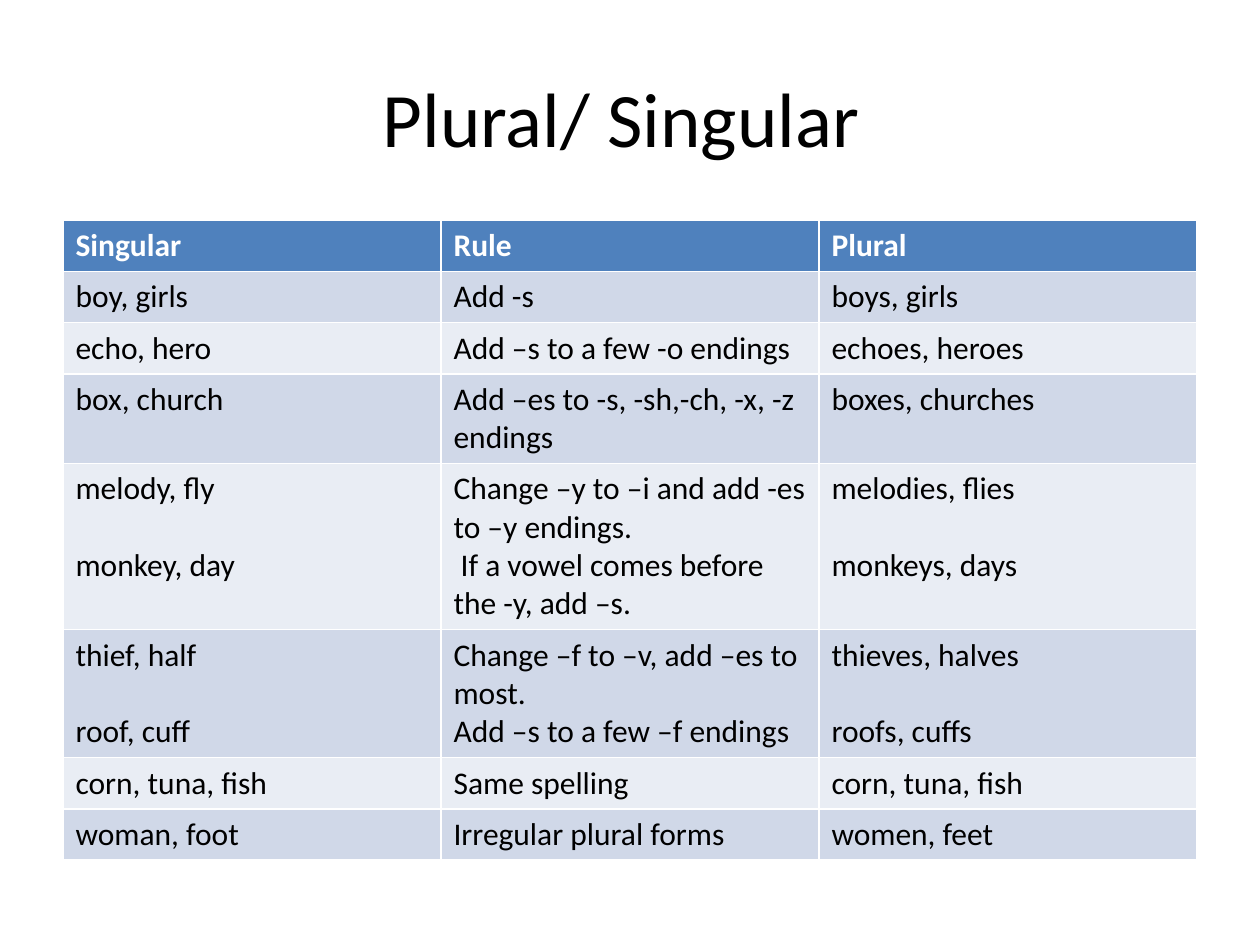
from pptx import Presentation, util as u
from pptx.dml.color import RGBColor
from pptx.enum import text

Pt = u.Pt
hues = {"head": "4F81BD", "odd": "D0D8E8", "even": "E9EDF4", "ink": "000000", "white": "FFFFFF"}
rows = [
    ("Singular", "Rule", "Plural"),
    ("boy, girls", "Add -s", "boys, girls"),
    ("echo, hero", "Add –s to a few -o endings", "echoes, heroes"),
    ("box, church", "Add –es to -s, -sh,-ch, -x, -z endings", "boxes, churches"),
    ("melody, fly\nmonkey, day",
     "Change –y to –i and add -es to –y endings.\n If a vowel comes before the -y, add –s.",
     "melodies, flies\nmonkeys, days"),
    ("thief, half\nroof, cuff",
     "Change –f to –v, add –es to most.\nAdd –s to a few –f endings",
     "thieves, halves\nroofs, cuffs"),
    ("corn, tuna, fish", "Same spelling", "corn, tuna, fish"),
    ("woman, foot", "Irregular plural forms", "women, feet"),
]
lines = [1, 1, 1, 2, 4, 3, 1, 1]
pitch = 21.95


def style(para, size, hue, bold=False):
    for run in para.runs:
        run.font.name = "Calibri"
        run.font.size = Pt(size)
        run.font.bold = bold
        run.font.color.rgb = RGBColor.from_string(hues[hue])


deck = Presentation()
deck.slide_width, deck.slide_height = Pt(720), Pt(540)
slide = deck.slides.add_slide(deck.slide_layouts[5])

title = slide.shapes.title
title.left, title.top, title.width, title.height = Pt(36), Pt(21.6), Pt(648), Pt(90)
frame = title.text_frame
frame.text = "Plural/ Singular "
frame.vertical_anchor = text.MSO_ANCHOR.MIDDLE
frame.paragraphs[0].alignment = text.PP_ALIGN.CENTER
style(frame.paragraphs[0], 44, "ink")

high = [7.2 + pitch * n for n in lines]
grid = slide.shapes.add_table(len(rows), 3, Pt(36), Pt(126), Pt(648), Pt(sum(high))).table
for col in grid.columns:
    col.width = Pt(216)
for r, row in enumerate(rows):
    grid.rows[r].height = Pt(high[r])
    fill = "head" if r == 0 else "odd" if r % 2 else "even"
    for c, words in enumerate(row):
        cell = grid.cell(r, c)
        cell.fill.solid()
        cell.fill.fore_color.rgb = RGBColor.from_string(hues[fill])
        cell.text_frame.text = words
        for p, para in enumerate(cell.text_frame.paragraphs):
            style(para, 18, "ink" if r else "white", r == 0)
            if p and c != 1:
                para.space_before = Pt(pitch)

deck.save("out.pptx")
